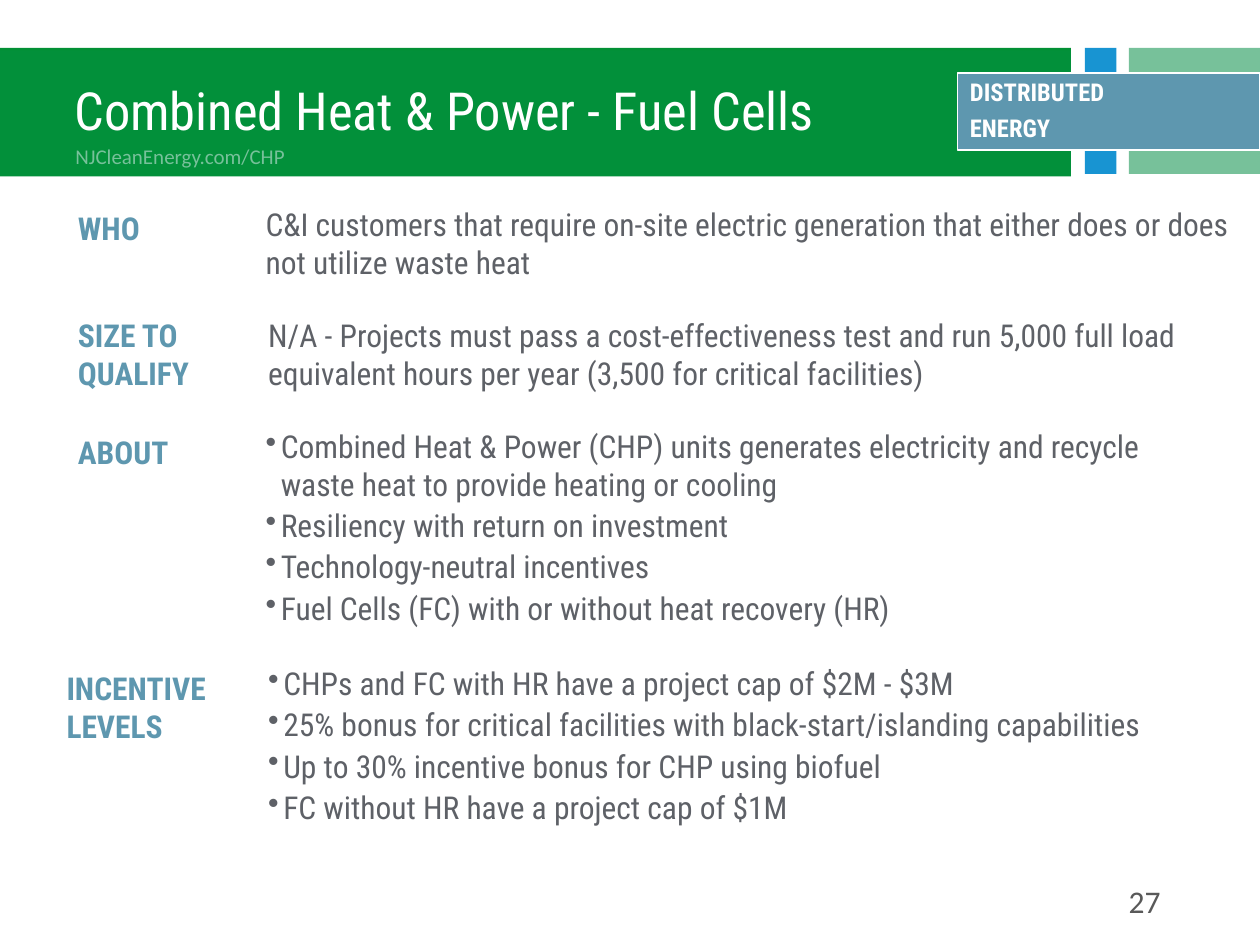
from lxml.etree import SubElement
from pptx import Presentation
from pptx.dml.color import RGBColor
from pptx.enum.shapes import MSO_SHAPE as Preset
from pptx.enum.text import MSO_ANCHOR as Anchor, MSO_AUTO_SIZE as AutoSize, PP_ALIGN as Align
from pptx.oxml.ns import qn
from pptx.util import Inches, Pt

WHITE = RGBColor(0xFF, 0xFF, 0xFF)
BLUE = RGBColor(0x18, 0x94, 0xD2)
MINT = RGBColor(0x77, 0xC1, 0x9A)
GREEN = RGBColor(0x02, 0x90, 0x35)
TITLE_GREEN = RGBColor(0x02, 0x90, 0x3A)
STEEL = RGBColor(0x5E, 0x97, 0xAF)
SLATE = RGBColor(0x5E, 0x61, 0x67)
GREY = RGBColor(0x59, 0x59, 0x59)

HEAD_FONT, NOTE_FONT = "Roboto Condensed", "Calibri"
COLUMNS, ROWS = 100, 75
WIDTH, HEIGHT = Inches(10), Inches(7.5)
BAND_TOP, BAND_ROWS = 3.8, 10
BANDS = [(86.1, 2.5, BLUE), (89.6, 10.4, MINT), (-0.1, 85.1, GREEN)]

LABELS = [
    ((5.2, 16.1, 15.1, 4.1), ["WHO"]),
    ((5.2, 24.6, 15.1, 7.1), ["SIZE TO QUALIFY"]),
    ((5.2, 33.9, 15.1, 4.1), ["ABOUT"]),
    ((4.3, 52.6, 17, 7.1), ["INCENTIVE", "LEVELS"]),
]
DETAILS = [
    ((20.1, 15.8, 78.8, 7.1), False, [
        "C&I customers that require on-site electric generation that either does or does "
        "not utilize waste heat"]),
    ((20.3, 24.6, 75.4, 7.1), False, [
        "N/A - Projects must pass a cost-effectiveness test and run 5,000 full load "
        "equivalent hours per year (3,500 for critical facilities)"]),
    ((20.1, 33.4, 76.5, 17), True, [
        "Combined Heat & Power (CHP) units generates electricity and recycle "
        "waste heat to provide heating or cooling",
        "Resiliency with return on investment",
        "Technology-neutral incentives",
        "Fuel Cells (FC) with or without heat recovery (HR)"]),
    ((20.3, 52.2, 78.8, 17.3), True, [
        "CHPs and FC with HR have a project cap of $2M - $3M",
        "25% bonus for critical facilities with black-start/islanding capabilities",
        "Up to 30% incentive bonus for CHP using biofuel",
        "FC without HR have a project cap of $1M"]),
]


def place(left, top, width, height):
    """Turn grid columns and rows into slide lengths."""
    return (round(WIDTH * left / COLUMNS), round(HEIGHT * top / ROWS),
            round(WIDTH * width / COLUMNS), round(HEIGHT * height / ROWS))


def add_bullet(para):
    """Give a paragraph a hanging round bullet."""
    props = para._p.get_or_add_pPr()
    props.set("marL", str(Inches(0.12)))
    props.set("indent", str(-Inches(0.12)))
    SubElement(props, qn("a:buChar"), char="•")


def write(frame, lines, size, color, font=HEAD_FONT, bold=False, align=Align.LEFT,
          after=0, spacing=None, bullets=False):
    """Fill a text frame with one paragraph for each line."""
    for index, line in enumerate(lines):
        para = frame.add_paragraph() if index else frame.paragraphs[0]
        if bullets:
            add_bullet(para)
        para.alignment = align
        para.space_after = Pt(after)
        para.line_spacing = spacing
        span = para.add_run()
        span.text = line
        span.font.name = font
        span.font.size = Pt(size)
        span.font.bold = bold
        span.font.color.rgb = color


def add_text(page, spot, lines, size, color, **style):
    """Add a wrapping text box that grows with its text."""
    frame = page.shapes.add_textbox(*place(*spot)).text_frame
    frame.word_wrap = True
    frame.auto_size = AutoSize.SHAPE_TO_FIT_TEXT
    write(frame, lines, size, color, **style)


def add_block(page, spot, fill, line=None):
    """Add a flat rectangle with an optional outline."""
    block = page.shapes.add_shape(Preset.RECTANGLE, *place(*spot))
    block.shadow.inherit = False
    block.fill.solid()
    block.fill.fore_color.rgb = fill
    if line is None:
        block.line.fill.background()
    else:
        block.line.color.rgb = line
        block.line.width = Pt(1)
    return block


def set_title(page, text):
    """Lay the title placeholder over the green band."""
    title = page.shapes.title
    title.left, title.top, title.width, title.height = place(-0.1, 4, 85.1, BAND_ROWS)
    title.fill.solid()
    title.fill.fore_color.rgb = TITLE_GREEN
    frame = title.text_frame
    frame.auto_size = AutoSize.NONE
    frame.vertical_anchor = Anchor.MIDDLE
    frame.margin_left = Inches(0.6)
    write(frame, [text], 30, WHITE, spacing=0.9)
    page.shapes.element.append(title.element)


def add_tag(page, lines):
    """Add the outlined programme tag at the right edge."""
    frame = add_block(page, (76, 5.8, 24, 6.1), STEEL, WHITE).text_frame
    frame.word_wrap = True
    frame.vertical_anchor = Anchor.MIDDLE
    frame.margin_top = frame.margin_bottom = Inches(0.06)
    write(frame, lines, 14, WHITE, bold=True, spacing=0.9, after=5)


def main():
    """Build the slide and save it."""
    deck = Presentation()
    deck.slide_width, deck.slide_height = WIDTH, HEIGHT
    page = deck.slides.add_slide(deck.slide_layouts[5])
    for left, width, color in BANDS:
        add_block(page, (left, BAND_TOP, width, BAND_ROWS), color)
    set_title(page, "Combined Heat & Power - Fuel Cells")
    add_text(page, (5, 10.9, 40.4, 3), ["NJCleanEnergy.com/CHP"], 12, MINT, font=NOTE_FONT)
    add_tag(page, ["DISTRIBUTED", "ENERGY"])
    for spot, lines in LABELS:
        add_text(page, spot, lines, 18, STEEL, bold=True)
    for spot, bullets, lines in DETAILS:
        add_text(page, spot, lines, 18, SLATE, after=2, bullets=bullets)
    add_text(page, (70.6, 69.5, 22.5, 4), ["27"], 18, GREY, font=NOTE_FONT, align=Align.RIGHT)
    deck.save("out.pptx")


if __name__ == "__main__":
    main()
